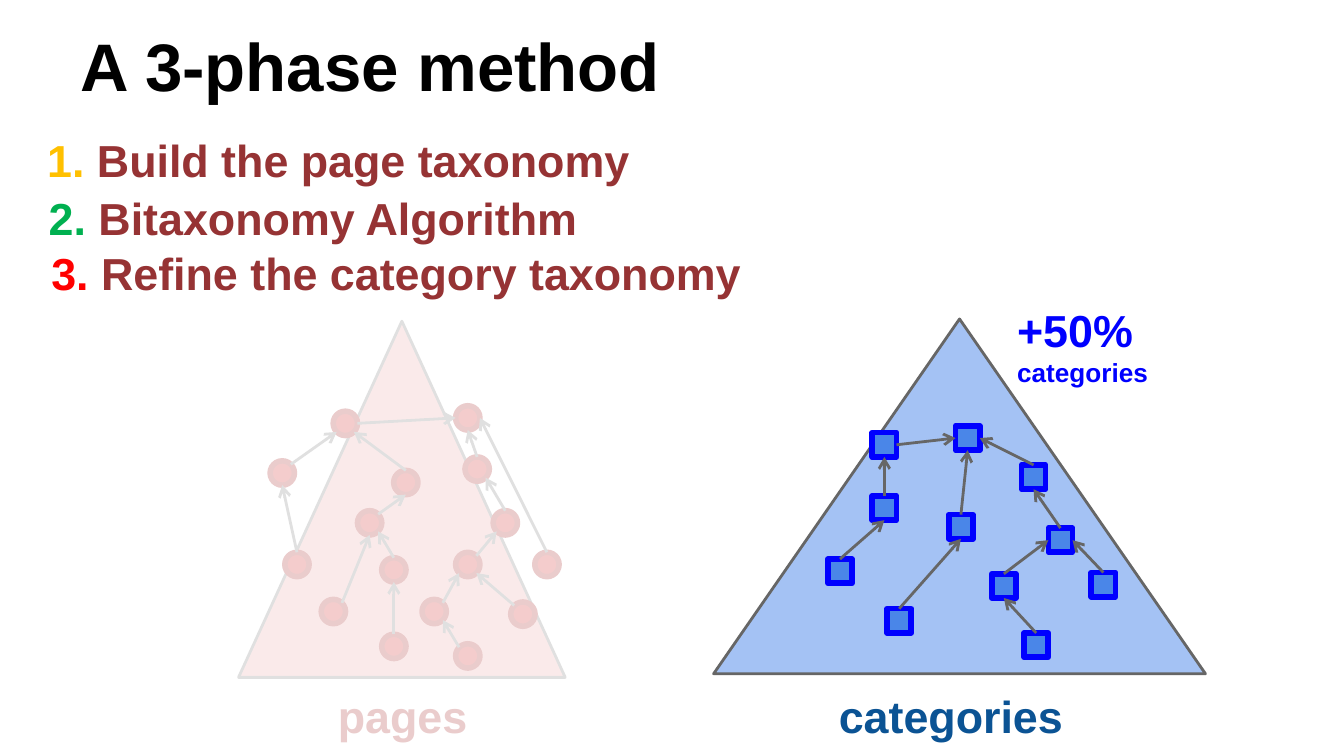
import pptx
import pptx.util
import pptx.dml.color
import pptx.enum.shapes
import pptx.enum.text
import pptx.oxml.ns
from lxml import etree

Pt = pptx.util.Pt
KIND = pptx.enum.shapes.MSO_SHAPE
ALIGN = pptx.enum.text.PP_ALIGN
ANCHOR = pptx.enum.text.MSO_ANCHOR
HUE = {
    "black": "000000", "white": "FFFFFF", "gray": "666666",
    "gold": "FFC000", "green": "00B050", "red": "FF0000", "brick": "963334",
    "pink": "EA9999", "rose": "CC0000", "wine": "990000", "label": "980000",
    "pale": "A4C2F4", "sky": "4A86E8", "blue": "0000FF", "navy": "0B5394",
}
NODE = 13
SIDES = {"N": (0, -1), "S": (0, 1), "E": (1, 0), "W": (-1, 0),
         "NE": (0.71, -0.71), "NW": (-0.71, -0.71),
         "SE": (0.71, 0.71), "SW": (-0.71, 0.71)}


def rgb(name):
    return pptx.dml.color.RGBColor.from_string(HUE[name])


def sub(node, tag, **attrs):
    return etree.SubElement(node, pptx.oxml.ns.qn(tag), **attrs)


class Deck:
    font = "Arial"

    def __init__(self, wide, high):
        self.prs = pptx.Presentation()
        self.prs.slide_width, self.prs.slide_height = Pt(wide), Pt(high)
        self.slide = self.prs.slides.add_slide(self.prs.slide_layouts[6])
        self.shapes = self.slide.shapes

    def text(self, box, paras, align=ALIGN.LEFT, anchor=ANCHOR.TOP, hang=False):
        """Each paragraph is a list of (text, size, colour) runs."""
        frame = self.shapes.add_textbox(*map(Pt, box)).text_frame
        frame.word_wrap = True
        frame.vertical_anchor = anchor
        frame.margin_left = frame.margin_right = Pt(7.2)
        frame.margin_top = frame.margin_bottom = Pt(7.2)
        frame.text = "\n".join("" for _ in paras)
        for para, runs in zip(frame.paragraphs, paras):
            para.alignment = align
            if hang:
                props = para._p.get_or_add_pPr()
                props.set("marL", str(Pt(36)))
                props.set("indent", str(Pt(-30)))
            for words, size, hue in runs:
                run = para.add_run()
                run.text = words
                run.font.name, run.font.size = self.font, Pt(size)
                run.font.bold = True
                run.font.color.rgb = rgb(hue)

    def shape(self, kind, box, fill, line, width):
        shape = self.shapes.add_shape(kind, *map(Pt, box))
        shape.shadow.inherit = False
        shape.fill.solid()
        shape.fill.fore_color.rgb = rgb(fill)
        shape.line.color.rgb = rgb(line)
        shape.line.width = Pt(width)
        return shape

    def arrow(self, start, end):
        line = self.shapes.add_connector(
            pptx.enum.shapes.MSO_CONNECTOR.STRAIGHT, *map(Pt, start + end))
        line.line.color.rgb = rgb("gray")
        line.line.width = Pt(1.5)
        sub(line.line._get_or_add_ln(), "a:tailEnd", type="arrow")
        sub(line._element.spPr, "a:effectLst")

    def graph(self, kind, nodes, edges, fill, line):
        """Edges read 'node side node side', the arrow pointing at the last."""
        for x, y in nodes.values():
            box = (x - NODE / 2, y - NODE / 2, NODE, NODE)
            self.shape(kind, box, fill, line, 3)

        def port(name, side):
            return tuple(at + step * NODE / 2
                         for at, step in zip(nodes[name], SIDES[side]))

        for edge in edges:
            tail, out, head, into = edge.split()
            self.arrow(port(tail, out), port(head, into))


deck = Deck(720, 405)

# Title and phases
deck.text((36, 16.6, 648, 46.8), [[("A 3-phase method", 36, "black")]],
          anchor=ANCHOR.BOTTOM)
phases = [
    (12.2, 64.1, "1.", "gold", "Build the page taxonomy"),
    (13, 95, "2.", "green", "Bitaxonomy Algorithm"),
    (14.4, 124.6, "3.", "red", "Refine the category taxonomy"),
]
for left, top, mark, hue, words in phases:
    deck.text((left, top, 427, 44),
              [[(mark, 24, hue), (" " + words, 24, "brick")]], hang=True)

# Page taxonomy
deck.text((150.5, 365, 130.3, 36.7), [[("pages", 24, "label")]],
          ALIGN.CENTER, ANCHOR.MIDDLE)
pages = {
    "a": (280.1, 329), "b": (255.6, 251.3), "c": (270.7, 280.1),
    "d": (293, 302.4), "e": (250.6, 351.4), "f": (178.6, 327.6),
    "g": (159.1, 302.4), "h": (211, 346.3), "i": (151.2, 253.4),
    "j": (198, 280.1), "k": (211, 305.3), "l": (232.6, 327.6),
    "m": (217.4, 258.5), "n": (250.6, 302.4), "o": (250.6, 223.9),
    "p": (185, 226.8),
}
links = ["i NE p SW", "g N i S", "m N p SE", "j NE m S", "b N o S",
         "n NE c SW", "c N b SE", "k N j SE", "a NW n SE", "l NE n SW",
         "e NW l SE", "f NE j S", "h N k S", "p E o W", "d N o E"]
deck.shapes = deck.slide.shapes.add_group_shape().shapes
deck.shape(KIND.ISOSCELES_TRIANGLE, (127.8, 172.1, 175, 190.8),
           "pink", "gray", 1.5)
deck.graph(KIND.OVAL, pages, links, "rose", "wine")
deck.shapes = deck.slide.shapes

# Veil that fades the pages
veil = deck.shape(KIND.RECTANGLE, (76.3, 168.5, 294.5, 236.2),
                  "white", "white", 2)
tint = veil._element.spPr.find(".//" + pptx.oxml.ns.qn("a:srgbClr"))
sub(tint, "a:alpha", val="80000")

# Category taxonomy
deck.shape(KIND.ISOSCELES_TRIANGLE, (382.3, 170.9, 263.5, 190.1),
           "pale", "gray", 1.5)
deck.text((439.2, 365, 140.4, 36.7), [[("categories", 24, "navy")]],
          ALIGN.CENTER, ANCHOR.MIDDLE)
deck.text((537.8, 154.8, 101.5, 51.1),
          [[("+50%", 24, "blue")], [("categories", 14, "blue")]])
cats = {
    "a": (473.8, 238.3), "b": (518.4, 234.7), "c": (473.8, 272.2),
    "d": (514.8, 282.2), "e": (553.7, 255.6), "f": (537.8, 313.9),
    "g": (591.1, 313.2), "h": (481.7, 332.6), "i": (555.1, 345.6),
    "j": (450, 306), "k": (568.1, 289.4),
}
links = ["j N c S", "h N d S", "i N f S", "g N k E", "f N k W",
         "d N b S", "k N e S", "c N a S", "a E b W", "e N b E"]
deck.graph(KIND.RECTANGLE, cats, links, "sky", "blue")

deck.prs.save("out.pptx")
